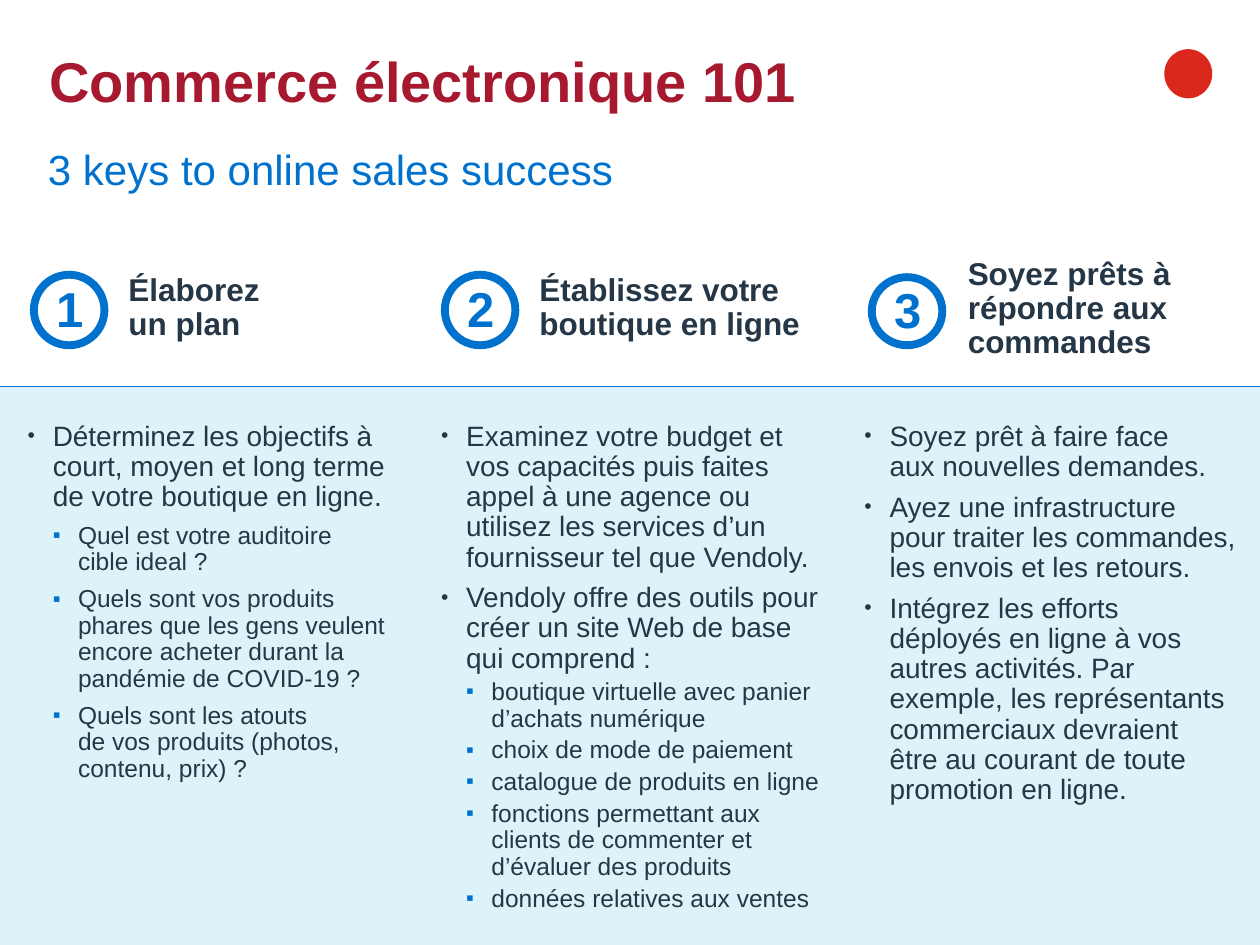
from copy import deepcopy
from dataclasses import dataclass

from lxml import etree
from pptx import Presentation
from pptx.dml.color import RGBColor
from pptx.enum.shapes import MSO_CONNECTOR, MSO_SHAPE
from pptx.enum.text import MSO_ANCHOR, PP_ALIGN
from pptx.oxml.ns import qn
from pptx.util import Pt

RECTANGLE, OVAL = MSO_SHAPE.RECTANGLE, MSO_SHAPE.OVAL
STRAIGHT = MSO_CONNECTOR.STRAIGHT
MIDDLE = MSO_ANCHOR.MIDDLE
LEFT, CENTER = PP_ALIGN.LEFT, PP_ALIGN.CENTER


@dataclass(frozen=True)
class Theme:
    font: str = "Arial"
    red: str = "A6192E"
    bright_red: str = "DA291C"
    blue: str = "0072CE"
    dark: str = "253746"
    pale: str = "DCF3F9"
    title: float = 32
    number: float = 28
    subtitle: float = 24
    heading: float = 18
    body: float = 16
    detail: float = 14


@dataclass(frozen=True)
class Bullet:
    character: str
    color: str
    percent: int
    level: int
    size: float


@dataclass(frozen=True)
class Item:
    text: str
    bullet: Bullet
    space_before: float = 6


@dataclass(frozen=True)
class Column:
    body_left: float
    circle_left: float
    heading_left: float
    heading_width: float
    heading: str
    items: tuple[Item, ...]
    heading_top: float = 157
    circle_top: float = 157
    circle_height: float = 40.3


THEME = Theme()
SLIDE_WIDTH, SLIDE_HEIGHT, BAND_TOP = 720, 540, 221
INDENT = 14.4
POINT = Bullet("•", THEME.dark, 75, 0, THEME.body)
DETAIL = Bullet("▪", THEME.blue, 90, 1, THEME.detail)

COLUMNS = (
    Column(15.8, 19.4, 73.4, 113.8, "Élaborez \nun plan", (
        Item("Déterminez les objectifs à court, moyen et long terme \n"
             "de votre boutique en ligne.", POINT),
        Item("Quel est votre auditoire \ncible ideal ?", DETAIL),
        Item("Quels sont vos produits \nphares que les gens veulent encore "
             "acheter durant la pandémie de COVID-19 ?", DETAIL),
        Item("Quels sont les atouts \nde vos produits (photos, contenu, prix) ?", DETAIL),
    )),
    Column(252, 254.2, 308.2, 190.8, "Établissez votre boutique en ligne", (
        Item("Examinez votre budget et vos capacités puis faites appel à une agence "
             "ou utilisez les services d’un fournisseur tel que Vendoly.", POINT),
        Item("Vendoly offre des outils pour créer un site Web de base "
             "qui comprend :", POINT),
        Item("boutique virtuelle avec panier d’achats numérique", DETAIL, 3),
        Item("choix de mode de paiement", DETAIL, 3),
        Item("catalogue de produits en ligne", DETAIL, 3),
        Item("fonctions permettant aux clients de commenter et "
             "d’évaluer des produits", DETAIL, 3),
        Item("données relatives aux ventes", DETAIL, 3),
    )),
    Column(493.9, 498.2, 553, 171.4, "Soyez prêts à répondre aux commandes", (
        Item("Soyez prêt à faire face \naux nouvelles demandes.", POINT),
        Item("Ayez une infrastructure \npour traiter les commandes, "
             "les envois et les retours.", POINT),
        Item("Intégrez les efforts \ndéployés en ligne à vos autres activités. "
             "Par exemple, les représentants \ncommerciaux devraient \n"
             "être au courant de toute promotion en ligne.", POINT),
    ), heading_top=147.6, circle_top=158.4, circle_height=38.9),
)


def color(value: str) -> RGBColor:
    return RGBColor.from_string(value)


def write(paragraph, text: str, *, size: float, ink: str, bold: bool = False,
          align=LEFT, line_spacing: float = 0.9, space_before: float = 0) -> None:
    paragraph.text = text
    paragraph.alignment = align
    paragraph.line_spacing = line_spacing
    paragraph.space_before = Pt(space_before)
    for run in paragraph.runs:
        run.font.name = THEME.font
        run.font.size = Pt(size)
        run.font.bold = bold
        run.font.color.rgb = color(ink)
    # Line breaks carry the text size too, so they do not alter the line height
    for line_break in paragraph._p.findall(qn("a:br")):
        line_break.append(deepcopy(paragraph.runs[0]._r.rPr))


def add_bullet(paragraph, bullet: Bullet) -> None:
    paragraph.level = bullet.level
    properties = paragraph._p.get_or_add_pPr()
    properties.set("marL", str(Pt(INDENT * (bullet.level + 1))))
    properties.set("indent", str(-Pt(INDENT)))
    bullet_color = etree.SubElement(properties, qn("a:buClr"))
    etree.SubElement(bullet_color, qn("a:srgbClr"), val=bullet.color)
    etree.SubElement(properties, qn("a:buSzPct"), val=str(bullet.percent * 1000))
    etree.SubElement(properties, qn("a:buFont"), typeface=THEME.font)
    etree.SubElement(properties, qn("a:buChar"), char=bullet.character)


def add_frame(slide, left: float, top: float, width: float, height: float,
              inset_top: float = 0):
    frame = slide.shapes.add_textbox(Pt(left), Pt(top), Pt(width), Pt(height)).text_frame
    frame.word_wrap = True
    frame.margin_left = frame.margin_right = frame.margin_bottom = 0
    frame.margin_top = Pt(inset_top)
    return frame


def add_shape(slide, kind, left: float, top: float, width: float, height: float,
              fill: str | None = None, line: str | None = None):
    shape = slide.shapes.add_shape(kind, Pt(left), Pt(top), Pt(width), Pt(height))
    shape.shadow.inherit = False
    if fill:
        shape.fill.solid()
        shape.fill.fore_color.rgb = color(fill)
    else:
        shape.fill.background()
    if line:
        shape.line.color.rgb = color(line)
        shape.line.width = Pt(4.5)
    else:
        shape.line.fill.background()
    return shape


def add_column(slide, number: int, column: Column) -> None:
    # Heading
    heading = add_frame(slide, column.heading_left, column.heading_top,
                        column.heading_width, 54.7)
    write(heading.paragraphs[0], column.heading, size=THEME.heading,
          ink=THEME.dark, bold=True, space_before=12)

    # Numbered circle
    circle = add_shape(slide, OVAL, column.circle_left, column.circle_top,
                       40.3, column.circle_height, line=THEME.blue)
    frame = circle.text_frame
    frame.vertical_anchor = MIDDLE
    frame.margin_bottom = Pt(5.8)
    write(frame.paragraphs[0], str(number), size=THEME.number, ink=THEME.blue,
          bold=True, align=CENTER, line_spacing=1.0)

    # Bulleted text
    body = add_frame(slide, column.body_left, 241.2, 222.5, 115.2)
    for index, item in enumerate(column.items):
        paragraph = body.add_paragraph() if index else body.paragraphs[0]
        write(paragraph, item.text, size=item.bullet.size, ink=THEME.dark,
              space_before=item.space_before)
        add_bullet(paragraph, item.bullet)


def main() -> None:
    presentation = Presentation()
    presentation.slide_width, presentation.slide_height = Pt(SLIDE_WIDTH), Pt(SLIDE_HEIGHT)
    slide = presentation.slides.add_slide(presentation.slide_layouts[6])

    # Corner mark and lower band
    add_shape(slide, OVAL, 665.3, 28.1, 27.4, 28.1, fill=THEME.bright_red)
    add_shape(slide, RECTANGLE, 0, BAND_TOP, SLIDE_WIDTH, SLIDE_HEIGHT - BAND_TOP,
              fill=THEME.pale)

    # Title and subtitle
    title = add_frame(slide, 28.1, 29.5, 609, 71.3, inset_top=3)
    write(title.paragraphs[0], "Commerce électronique 101", size=THEME.title,
          ink=THEME.red, bold=True, line_spacing=0.85)
    subtitle = add_frame(slide, 27.4, 85, 663, 36)
    write(subtitle.paragraphs[0], "3 keys to online sales success",
          size=THEME.subtitle, ink=THEME.blue, space_before=12)

    # Three keys
    for number, column in enumerate(COLUMNS, start=1):
        add_column(slide, number, column)

    # Dividing line
    divider = slide.shapes.add_connector(STRAIGHT, 0, Pt(BAND_TOP),
                                         Pt(SLIDE_WIDTH), Pt(BAND_TOP))
    divider.line.color.rgb = color(THEME.blue)
    divider.line.width = Pt(0.85)
    etree.SubElement(divider._element.spPr, qn("a:effectLst"))

    presentation.save("out.pptx")


if __name__ == "__main__":
    main()
